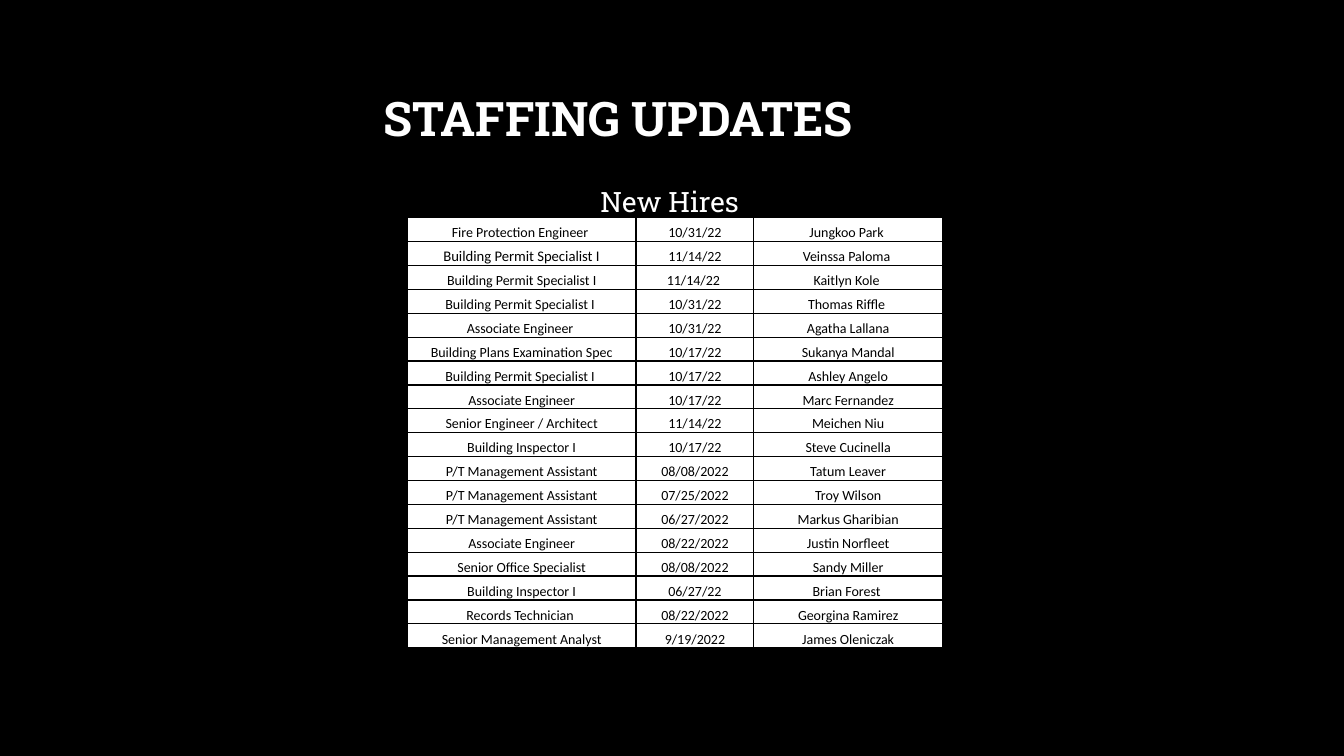
from lxml import etree
from pptx import Presentation
from pptx.dml.color import RGBColor
from pptx.enum.text import MSO_ANCHOR, PP_ALIGN
from pptx.oxml.ns import qn
from pptx.util import Pt

CENTER = PP_ALIGN.CENTER
TOP, MIDDLE, BOTTOM = MSO_ANCHOR.TOP, MSO_ANCHOR.MIDDLE, MSO_ANCHOR.BOTTOM

COLORS = {"black": "000000", "white": "FFFFFF"}
HEADING_FONT, TABLE_FONT = "Roboto Slab", "Calibri"
COLUMN_WIDTHS = (163.4, 84.2, 134.7)
ROW_HEIGHT = 17.08
LARGER_CELLS = {(1, 0): 10.5}

# Position, start date, name; some entries end in a space that shifts the centring
NEW_HIRES = [
    ("Fire Protection Engineer ", "10/31/22", "Jungkoo Park "),
    ("Building Permit Specialist I", "11/14/22", "Veinssa Paloma "),
    ("Building Permit Specialist I", "11/14/22 ", "Kaitlyn Kole "),
    ("Building Permit Specialist I ", "10/31/22", "Thomas Riffle "),
    ("Associate Engineer ", "10/31/22", "Agatha Lallana"),
    ("Building Plans Examination Spec", "10/17/22", "Sukanya Mandal"),
    ("Building Permit Specialist I ", "10/17/22", "Ashley Angelo"),
    ("Associate Engineer", "10/17/22", "Marc Fernandez"),
    ("Senior Engineer / Architect", "11/14/22", "Meichen Niu"),
    ("Building Inspector I", "10/17/22", "Steve Cucinella"),
    ("P/T Management Assistant", "08/08/2022", "Tatum Leaver"),
    ("P/T Management Assistant", "07/25/2022", "Troy Wilson"),
    ("P/T Management Assistant", "06/27/2022", "Markus Gharibian"),
    ("Associate Engineer", "08/22/2022", "Justin Norfleet"),
    ("Senior Office Specialist", "08/08/2022", "Sandy Miller"),
    ("Building Inspector I", "06/27/22", "Brian Forest "),
    ("Records Technician ", "08/22/2022", "Georgina Ramirez"),
    ("Senior Management Analyst", "9/19/2022", "James Oleniczak"),
]


def rgb(name):
    return RGBColor.from_string(COLORS[name])


def write(tf, text, size, font, color, bold=False, line_spacing=None,
          space_before=None, indent=None):
    p = tf.paragraphs[0]
    p.alignment = CENTER
    if line_spacing:
        p.line_spacing = line_spacing
    if space_before:
        p.space_before = Pt(space_before)
    if indent:
        p._p.get_or_add_pPr().set("marL", str(Pt(indent)))
    r = p.add_run()
    r.text = text
    r.font.size = Pt(size)
    r.font.name = font
    r.font.bold = bold
    r.font.color.rgb = rgb(color)


def add_text(s, text, left, top, width, height, anchor=TOP, **fmt):
    tf = s.shapes.add_textbox(Pt(left), Pt(top), Pt(width), Pt(height)).text_frame
    tf.word_wrap = True
    tf.vertical_anchor = anchor
    write(tf, text, font=HEADING_FONT, color="white", **fmt)


def add_borders(cell, color, width):
    tcPr = cell._tc.get_or_add_tcPr()
    for side in ("a:lnL", "a:lnR", "a:lnT", "a:lnB"):
        ln = etree.SubElement(tcPr, qn(side), w=str(Pt(width)))
        fill = etree.SubElement(ln, qn("a:solidFill"))
        etree.SubElement(fill, qn("a:srgbClr"), val=COLORS[color])


def fill_cell(cell, text, size):
    add_borders(cell, "black", 1)
    cell.fill.solid()
    cell.fill.fore_color.rgb = rgb("white")
    cell.margin_left = cell.margin_right = Pt(5)
    cell.margin_top = cell.margin_bottom = 0
    cell.vertical_anchor = BOTTOM
    write(cell.text_frame, text, size=size, font=TABLE_FONT, color="black")


def add_hires_table(s, left, top):
    table = s.shapes.add_table(
        len(NEW_HIRES), len(COLUMN_WIDTHS), Pt(left), Pt(top),
        Pt(sum(COLUMN_WIDTHS)), Pt(ROW_HEIGHT * len(NEW_HIRES))).table
    table.first_row = table.horz_banding = False
    for column, width in zip(table.columns, COLUMN_WIDTHS):
        column.width = Pt(width)
    for i, hire in enumerate(NEW_HIRES):
        table.rows[i].height = Pt(ROW_HEIGHT)
        for j, text in enumerate(hire):
            fill_cell(table.cell(i, j), text, LARGER_CELLS.get((i, j), 10))


def main():
    prs = Presentation()
    prs.slide_width, prs.slide_height = Pt(960), Pt(540)
    s = prs.slides.add_slide(prs.slide_layouts[6])
    s.background.fill.solid()
    s.background.fill.fore_color.rgb = rgb("black")

    # Headings
    add_text(s, "STAFFING UPDATES", 18, 22.3, 847.4, 128.9, anchor=MIDDLE,
             size=34, bold=True, line_spacing=0.9)
    add_text(s, "New Hires", 87.8, 123.1, 777.6, 318.2,
             size=20, line_spacing=1.2, space_before=10, indent=3.6)

    # Table of new staff
    add_hires_table(s, 290.9, 155.5)

    prs.save("out.pptx")


if __name__ == "__main__":
    main()
